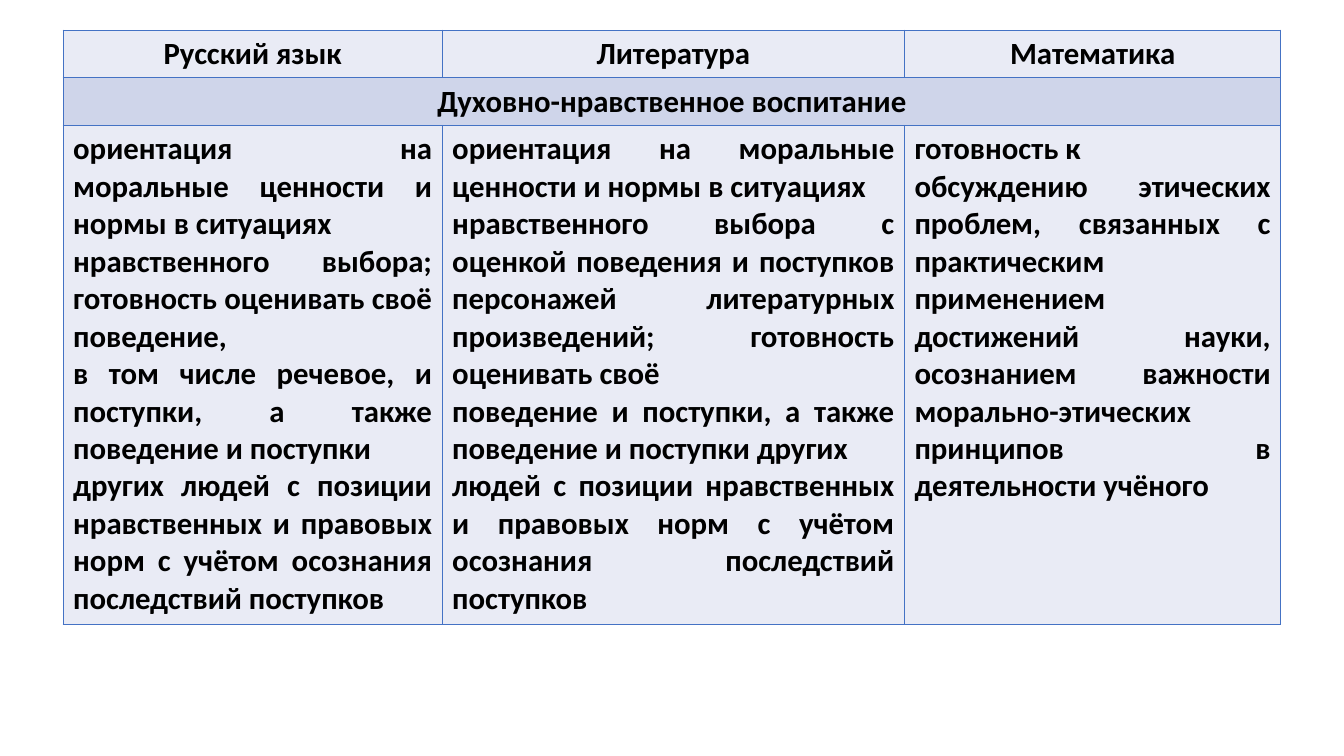
from pptx import Presentation
from pptx.dml.color import RGBColor
from pptx.enum.text import PP_ALIGN
from pptx.oxml.ns import qn
from pptx.util import Inches, Pt
from lxml.etree import SubElement

WIDE, HIGH = Inches(13.33), Inches(7.5)
LEFT, TOP = 0.047, 0.04
COLS = (0.282, 0.344, 0.28)
ROWS = (0.063, 0.063, 0.66)
COLORS = {"line": "4472C4", "pale": "E9EBF5", "band": "CFD5EA", "text": "000000"}
HEADS = ("Русский язык", "Литература", "Математика")
THEME = "Духовно-нравственное воспитание"
GOALS = (
    (
        "ориентация на моральные ценности и нормы в ситуациях",
        "нравственного выбора; готовность оценивать своё поведение,",
        "в том числе речевое, и поступки, а также поведение и поступки",
        "других людей с позиции нравственных и правовых норм с учётом осознания последствий поступков",
    ),
    (
        "ориентация на моральные ценности и нормы в ситуациях",
        "нравственного выбора с оценкой поведения и поступков персонажей литературных произведений; готовность оценивать своё",
        "поведение и поступки, а также поведение и поступки других",
        "людей с позиции нравственных и правовых норм с учётом осознания последствий поступков",
    ),
    (
        "готовность к",
        "обсуждению этических проблем, связанных с практическим",
        "применением достижений науки, осознанием важности морально-этических принципов в деятельности учёного",
    ),
)


def add_grid(slide):
    frame = slide.shapes.add_table(
        len(ROWS), len(COLS), int(WIDE * LEFT), int(HIGH * TOP),
        int(WIDE * sum(COLS)), int(HIGH * sum(ROWS)),
    )
    table = frame.table
    for col, share in zip(table.columns, COLS):
        col.width = int(WIDE * share)
    for row, share in zip(table.rows, ROWS):
        row.height = int(HIGH * share)
    return table


def set_border(cell):
    props = cell._tc.get_or_add_tcPr()
    for place, side in enumerate(("lnL", "lnR", "lnT", "lnB")):
        line = props.makeelement(qn(f"a:{side}"), {"w": str(Pt(1))})
        fill = SubElement(line, qn("a:solidFill"))
        SubElement(fill, qn("a:srgbClr"), val=COLORS["line"])
        props.insert(place, line)


def set_fill(cell, color):
    cell.fill.solid()
    cell.fill.fore_color.rgb = RGBColor.from_string(COLORS[color])


def set_text(cell, text, align):
    cell.text_frame.text = text
    for para in cell.text_frame.paragraphs:
        para.alignment = align
        for run in para.runs:
            font = run.font
            font.name, font.size, font.bold = "Calibri", Pt(22), True
            font.color.rgb = RGBColor.from_string(COLORS["text"])


def main():
    deck = Presentation()
    deck.slide_width, deck.slide_height = WIDE, HIGH
    slide = deck.slides.add_slide(deck.slide_layouts[6])
    table = add_grid(slide)
    table.cell(1, 0).merge(table.cell(1, 2))
    for row, color in enumerate(("pale", "band", "pale")):
        for col in range(len(COLS)):
            cell = table.cell(row, col)
            set_fill(cell, color)
            set_border(cell)
    set_text(table.cell(1, 0), THEME, PP_ALIGN.CENTER)
    for col, (head, goals) in enumerate(zip(HEADS, GOALS)):
        set_text(table.cell(0, col), head, PP_ALIGN.CENTER)
        set_text(table.cell(2, col), "\n".join(goals), PP_ALIGN.JUSTIFY)
    deck.save("out.pptx")


if __name__ == "__main__":
    main()
